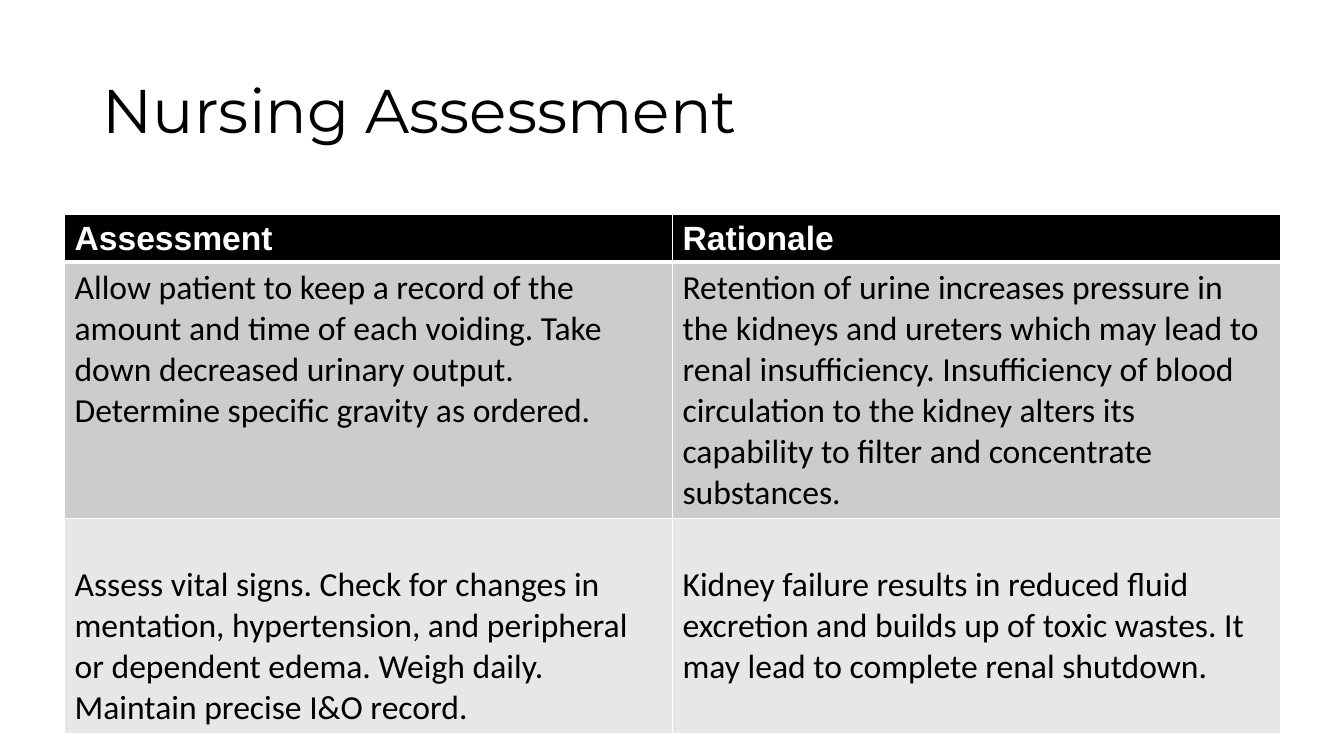
import pptx
import pptx.util
import pptx.dml.color
import pptx.enum.text
import pptx.oxml
import pptx.oxml.ns
from pptx.util import Inches, Pt

RGBColor = pptx.dml.color.RGBColor
BLACK = RGBColor(0x00, 0x00, 0x00)
WHITE = RGBColor(0xFF, 0xFF, 0xFF)
GREY = RGBColor(0xCC, 0xCC, 0xCC)
LIGHT_GREY = RGBColor(0xE7, 0xE7, 0xE7)

ROWS = [
    ("Assessment", "Rationale"),
    ("Allow patient to keep a record of the amount and time of each voiding. "
     "Take down decreased urinary output. Determine specific gravity as ordered.",
     "Retention of urine increases pressure in the kidneys and ureters which may "
     "lead to renal insufficiency. Insufficiency of blood circulation to the kidney "
     "alters its capability to filter and concentrate substances."),
    ("Assess vital signs. Check for changes in mentation, hypertension, and "
     "peripheral or dependent edema. Weigh daily. Maintain precise I&O record.",
     "Kidney failure results in reduced fluid excretion and builds up of toxic "
     "wastes. It may lead to complete renal shutdown."),
]
ROW_HEIGHTS = [0.47, 2.53, 2.13]
ROW_FILLS = [BLACK, GREY, LIGHT_GREY]
ROW_TOP_MARGINS = [0.05, 0.05, 0.46]


class SlideBuilder:
    """Holds the text style and the current slide."""

    title_font, header_font, body_font = "Montserrat", "Arial", "Calibri"
    title_size, table_size = Pt(44), Pt(24)

    def __init__(self, prs):
        self.s = prs.slides.add_slide(prs.slide_layouts[5])

    def style(self, p, name, size, color, bold=False):
        p.alignment = pptx.enum.text.PP_ALIGN.LEFT
        p.font.name = name
        p.font.size = size
        p.font.bold = bold
        p.font.color.rgb = color

    def title(self, text, left, top, width, height):
        sp = self.s.shapes.title
        sp.left, sp.top = Inches(left), Inches(top)
        sp.width, sp.height = Inches(width), Inches(height)
        tf = sp.text_frame
        tf.text = text
        tf.word_wrap = True
        tf.vertical_anchor = pptx.enum.text.MSO_ANCHOR.MIDDLE
        p = tf.paragraphs[0]
        p.line_spacing = 0.9
        self.style(p, self.title_font, self.title_size, BLACK)

    def borders(self, cell, widths):
        tcPr = cell._tc.get_or_add_tcPr()
        for side, width in widths.items():
            tcPr.append(pptx.oxml.parse_xml(
                f'<a:ln{side} {pptx.oxml.ns.nsdecls("a")} w="{Pt(width)}">'
                f'<a:solidFill><a:srgbClr val="{WHITE}"/></a:solidFill></a:ln{side}>'))

    def table(self, rows, left, top, width):
        table = self.s.shapes.add_table(
            len(rows), len(rows[0]), Inches(left), Inches(top),
            Inches(width), Inches(sum(ROW_HEIGHTS))).table
        for i, texts in enumerate(rows):
            table.rows[i].height = Inches(ROW_HEIGHTS[i])
            for j, text in enumerate(texts):
                self.cell(table.cell(i, j), text, i)

    def cell(self, cell, text, row):
        header = row == 0
        cell.text = text
        cell.margin_left = cell.margin_right = Inches(0.1)
        cell.margin_top = Inches(ROW_TOP_MARGINS[row])
        cell.margin_bottom = Inches(0.05)
        # A thicker rule separates the header from the body
        self.borders(cell, {"L": 1, "R": 1, "T": 3 if row == 1 else 1,
                            "B": 3 if header else 1})
        cell.fill.solid()
        cell.fill.fore_color.rgb = ROW_FILLS[row]
        self.style(cell.text_frame.paragraphs[0],
                   self.header_font if header else self.body_font,
                   self.table_size, WHITE if header else BLACK, header)


def main():
    prs = pptx.Presentation()
    prs.slide_width, prs.slide_height = Inches(13.33), Inches(7.5)
    slide = SlideBuilder(prs)

    # Title
    slide.title("Nursing Assessment", 0.92, 0.4, 11.5, 1.45)

    # Assessment table
    slide.table(ROWS, 0.64, 2.13, 12.06)

    prs.save("out.pptx")


if __name__ == "__main__":
    main()
